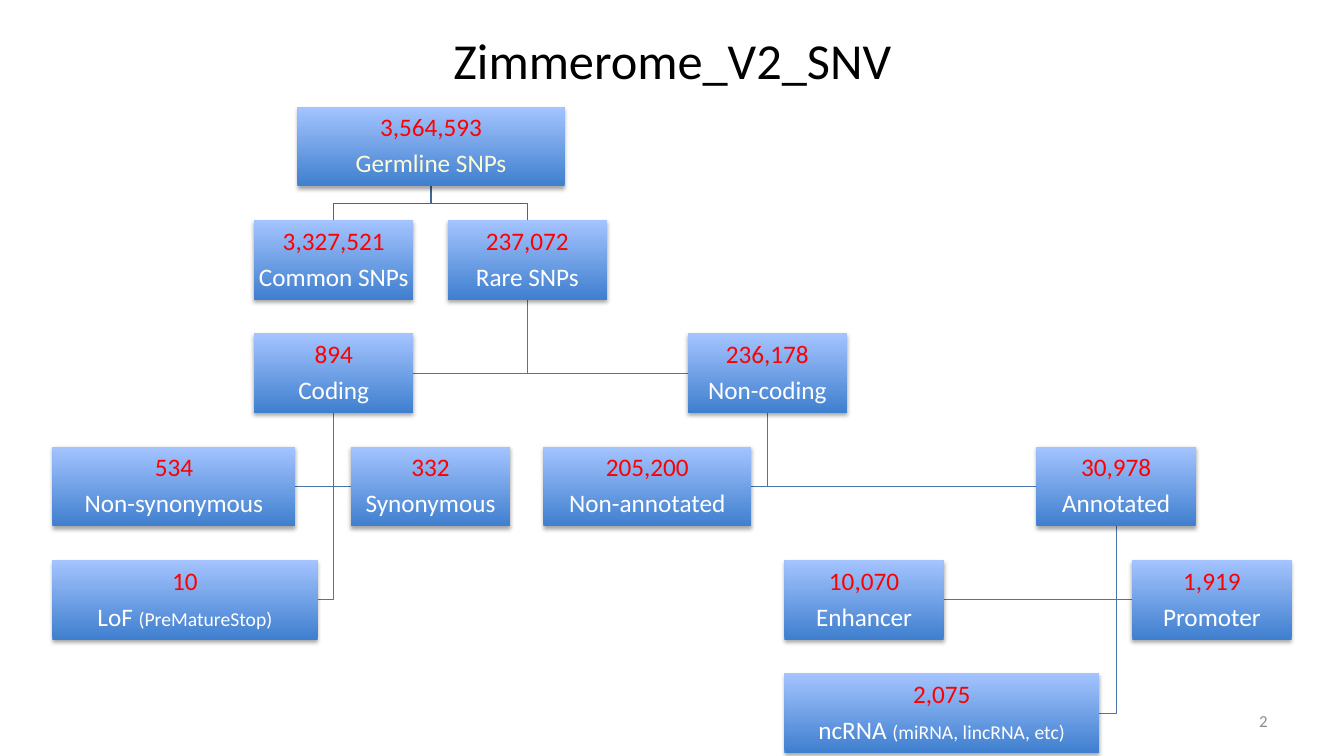
from lxml import etree
from pptx import Presentation
from pptx.dml.color import RGBColor
from pptx.enum import shapes, text
from pptx.oxml import ns
from pptx.util import Inches, Pt

TITLE = "Zimmerome_V2_SNV"
PAGE = "2"
# label: (count, small note, parent, row, left, width)
GROUPS = {
    "Germline SNPs": ("3,564,593", "", None, 0, 2.95, 2.65),
    "Common SNPs": ("3,327,521", "", "Germline SNPs", 1, 2.52, 1.58),
    "Rare SNPs": ("237,072", "", "Germline SNPs", 1, 4.44, 1.58),
    "Coding": ("894", "", "Rare SNPs", 2, 2.52, 1.58),
    "Non-synonymous": ("534", "", "Coding", 3, 0.52, 2.41),
    "Synonymous": ("332", "", "Coding", 3, 3.48, 1.58),
    "LoF": ("10", "(PreMatureStop)", "Coding", 4, 0.52, 2.63),
    "Non-coding": ("236,178", "", "Rare SNPs", 2, 6.82, 1.58),
    "Non-annotated": ("205,200", "", "Non-coding", 3, 5.39, 2.06),
    "Annotated": ("30,978", "", "Non-coding", 3, 10.28, 1.58),
    "Enhancer": ("10,070", "", "Annotated", 4, 7.78, 1.58),
    "Promoter": ("1,919", "", "Annotated", 4, 11.23, 1.58),
    "ncRNA": ("2,075", "(miRNA, lincRNA, etc)", "Annotated", 5, 7.78, 3.12),
}
ROOT = "Germline SNPs"
COLORS = {
    "title": "000000", "page": "8C8C8C", "count": "FF0000", "label": "FFFFFF",
    "root label": "FDFCD5", "box bottom": "3F7FCE", "box top": "A4C4FF",
    "root branch": "3F6797", "branch": "4875AC", "shadow": "000000",
}
FONT = "Calibri"
FIRST_TOP, LAST_TOP, LAST_ROW = 1.06, 6.68, 5
BOX_HEIGHT = 0.79
ROW_PITCH = (LAST_TOP - FIRST_TOP) / LAST_ROW


def rgb(name):
    return RGBColor.from_string(COLORS[name])


def add_run(paragraph, words, size, color):
    run = paragraph.add_run()
    run.text = words
    for key, value in {"name": FONT, "size": Pt(size)}.items():
        setattr(run.font, key, value)
    run.font.color.rgb = rgb(color)


def row_top(row):
    return FIRST_TOP + row * ROW_PITCH


def branch_points(parent, child):
    """Corners of the line from a parent's bottom to its child."""
    _, _, _, parent_row, parent_left, parent_width = GROUPS[parent]
    _, _, _, row, left, width = GROUPS[child]
    stem = parent_left + parent_width / 2
    start = row_top(parent_row) + BOX_HEIGHT
    if parent == ROOT:
        end, center = row_top(row), left + width / 2
        fork = (start + end) / 2
        return [(stem, start), (stem, fork), (center, fork), (center, end)]
    middle = row_top(row) + BOX_HEIGHT / 2
    side = left if left > stem else left + width
    return [(stem, start), (stem, middle), (side, middle)]


def add_branch(slide, parent, child):
    points = [(Inches(x), Inches(y)) for x, y in branch_points(parent, child)]
    builder = slide.shapes.build_freeform(*points[0])
    builder.add_line_segments(points[1:], close=False)
    branch = builder.convert_to_shape()
    branch.shadow.inherit = False
    branch.fill.background()
    branch.line.width = Pt(0.75)
    branch.line.color.rgb = rgb("root branch" if parent == ROOT else "branch")


def add_soft_shadow(box):
    box.shadow.inherit = False
    effects = box._element.spPr.find(ns.qn("a:effectLst"))
    shadow = etree.SubElement(
        effects, ns.qn("a:outerShdw"), blurRad=str(Pt(3.1)), dist=str(Pt(1.8)),
        dir="5400000", rotWithShape="0")
    color = etree.SubElement(shadow, ns.qn("a:srgbClr"), val=COLORS["shadow"])
    etree.SubElement(color, ns.qn("a:alpha"), val="35000")


def add_group(slide, label):
    count, note, _, row, left, width = GROUPS[label]
    box = slide.shapes.add_shape(
        shapes.MSO_SHAPE.RECTANGLE, Inches(left), Inches(row_top(row)),
        Inches(width), Inches(BOX_HEIGHT))
    box.line.fill.background()
    box.fill.gradient()
    box.fill.gradient_angle = 90
    for stop, name in zip(box.fill.gradient_stops, ("box bottom", "box top")):
        stop.color.rgb = rgb(name)
    add_soft_shadow(box)

    frame = box.text_frame
    frame.word_wrap = True
    frame.vertical_anchor = text.MSO_ANCHOR.MIDDLE
    for side in ("left", "right", "top", "bottom"):
        setattr(frame, f"margin_{side}", Inches(0.01))
    count_line, label_line = frame.paragraphs[0], frame.add_paragraph()
    line_format = {"alignment": text.PP_ALIGN.CENTER, "line_spacing": 0.9,
                   "space_after": Pt(6.3)}
    for line in (count_line, label_line):
        for key, value in line_format.items():
            setattr(line, key, value)
    add_run(count_line, count, 18, "count")
    color = "root label" if label == ROOT else "label"
    add_run(label_line, f"{label} " if note else label, 18, color)
    if note:
        add_run(label_line, note, 14, color)


def add_title(slide):
    title = slide.shapes.title
    place = {"left": 0.67, "top": -0.04, "width": 12, "height": 1.25}
    for key, value in place.items():
        setattr(title, key, Inches(value))
    title.text_frame.vertical_anchor = text.MSO_ANCHOR.MIDDLE
    heading = title.text_frame.paragraphs[0]
    heading.alignment = text.PP_ALIGN.CENTER
    add_run(heading, TITLE, 36, "title")


def add_page_number(slide):
    page = slide.shapes.add_textbox(
        Inches(9.56), Inches(6.95), Inches(3.11), Inches(0.4))
    page.text_frame.word_wrap = True
    page.text_frame.vertical_anchor = text.MSO_ANCHOR.MIDDLE
    number = page.text_frame.paragraphs[0]
    number.alignment = text.PP_ALIGN.RIGHT
    add_run(number, PAGE, 12, "page")


def main():
    deck = Presentation()
    deck.slide_width, deck.slide_height = Inches(13.33), Inches(7.5)
    slide = deck.slides.add_slide(deck.slide_layouts.get_by_name("Title Only"))
    add_title(slide)
    add_page_number(slide)
    for label, (_, _, parent, *_) in GROUPS.items():
        if parent:
            add_branch(slide, parent, label)
    for label in GROUPS:
        add_group(slide, label)
    deck.save("out.pptx")


if __name__ == "__main__":
    main()
